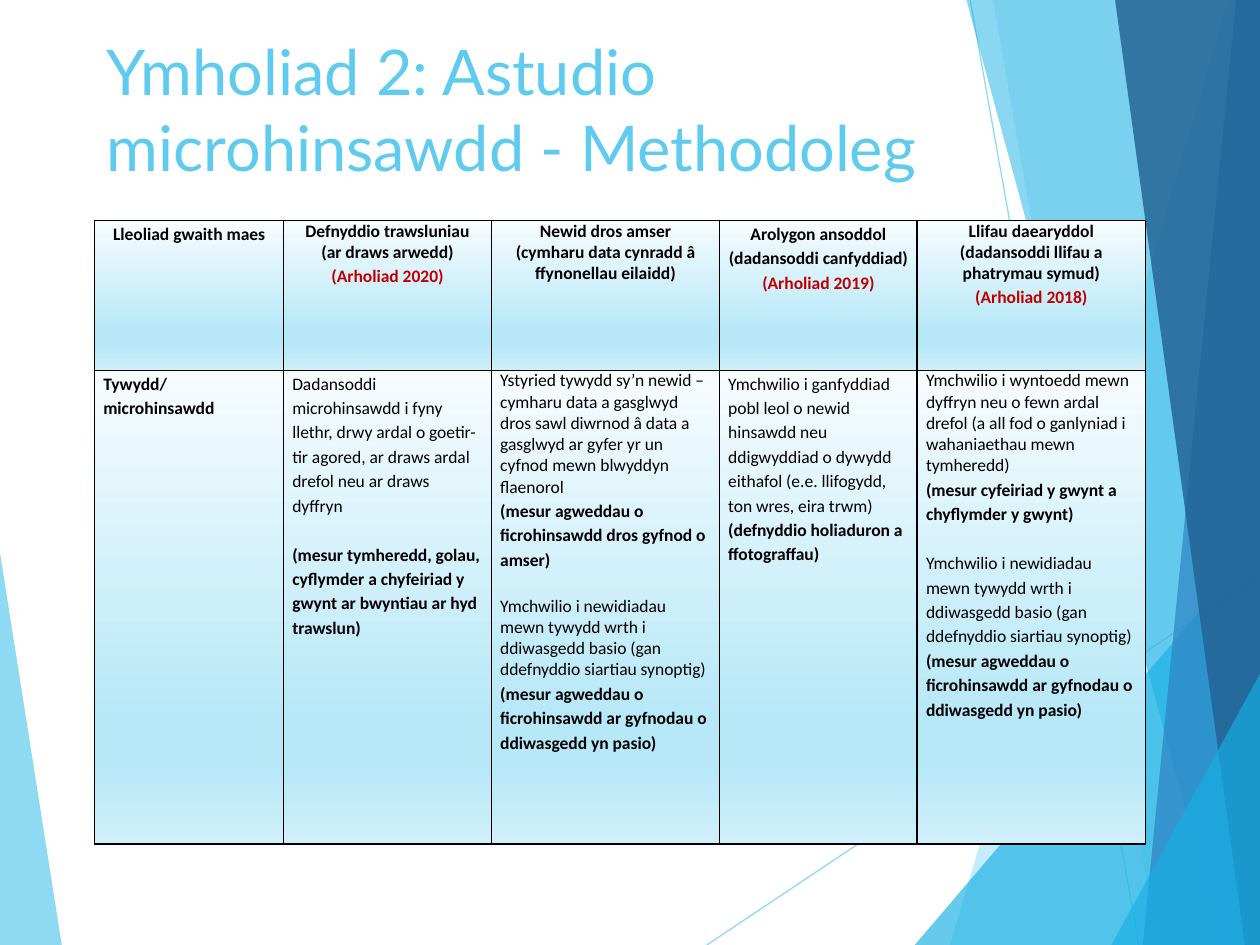
from lxml.etree import SubElement
from pptx import Presentation
from pptx.dml.color import RGBColor
from pptx.enum.shapes import MSO_CONNECTOR
from pptx.enum.text import MSO_ANCHOR, PP_ALIGN
from pptx.oxml.ns import qn
from pptx.util import Inches, Pt

SKY = RGBColor(0x5F, 0xCB, 0xEF)
CYAN = RGBColor(0x17, 0xB0, 0xE4)
BLUE = RGBColor(0x2E, 0x83, 0xC3)
NAVY = RGBColor(0x22, 0x62, 0x92)
RED = RGBColor(0xC0, 0x00, 0x00)
BLACK = RGBColor(0x00, 0x00, 0x00)
FADE = [(0, RGBColor(0xF7, 0xFC, 0xFE)), (74, RGBColor(0xB7, 0xE8, 0xF8)),
        (83, RGBColor(0xB7, 0xE8, 0xF8)), (100, RGBColor(0xCF, 0xEF, 0xFA))]

WIDE, HIGH = Inches(10), Inches(7.5)

# Background facets and lines: colour, opacity, corners in percent of the slide
SHARDS = [
    (SKY, 70, [(0, 58.5), (4.9, 100), (0, 100)]),
    (SKY, 36, [(97.5, 0), (75.4, 100), (100, 100), (100, 0)]),
    (SKY, 20, [(78.8, 0), (91.9, 100), (100, 100), (100, 0)]),
    (CYAN, 66, [(72.6, 100), (100, 57.2), (100, 100)]),
    (CYAN, 50, [(76.7, 0), (97, 100), (100, 100), (100, 0)]),
    (BLUE, 70, [(98.1, 0), (90.7, 100), (100, 100), (100, 0)]),
    (NAVY, 82, [(88.5, 0), (98.8, 100), (100, 100), (100, 0)]),
    (CYAN, 66, [(88.2, 100), (100, 71.3), (100, 100)]),
]
RAYS = [((56.1, 100), (100, 60.9)), ((77, 0), (90.4, 100))]

# Table grid, in percent of the slide
COLS = [15, 16.5, 18.1, 15.7, 18.1]
ROWS = [15.87, 50.13]

# Paragraph formats
TIGHT = {"bold": True}
LOOSE = {"bold": True, "lead": 1.15}
EXAM = {"bold": True, "lead": 1.15, "color": RED}
BODY = {"lead": 1.15}
FLAT = {}
GAP = 14

LOWS = "Ymchwilio i newidiadau mewn tywydd wrth i ddiwasgedd basio (gan ddefnyddio siartiau synoptig)"
PASS = "(mesur agweddau o ficrohinsawdd ar gyfnodau o ddiwasgedd yn pasio)"

HEAD = [
    [("Lleoliad gwaith maes", LOOSE)],
    [("Defnyddio trawsluniau", TIGHT), ("(ar draws arwedd)", TIGHT),
     ("(Arholiad 2020)", EXAM)],
    [("Newid dros amser", TIGHT),
     ("(cymharu data cynradd â ffynonellau eilaidd)", TIGHT)],
    [("Arolygon ansoddol (dadansoddi canfyddiad)", LOOSE),
     ("(Arholiad 2019)", EXAM)],
    [("Llifau daearyddol", TIGHT),
     ("(dadansoddi llifau a phatrymau symud)", TIGHT),
     ("(Arholiad 2018)", EXAM)],
]
MAIN = [
    [("Tywydd/microhinsawdd", LOOSE)],
    [("Dadansoddi microhinsawdd i fyny llethr, drwy ardal o goetir-tir agored, "
      "ar draws ardal drefol neu ar draws dyffryn", BODY),
     ("(mesur tymheredd, golau, cyflymder a chyfeiriad y gwynt ar bwyntiau "
      "ar hyd trawslun)", {**LOOSE, "above": GAP})],
    [("Ystyried tywydd sy’n newid – cymharu data a gasglwyd dros sawl diwrnod "
      "â data a gasglwyd ar gyfer yr un cyfnod mewn blwyddyn flaenorol", FLAT),
     ("(mesur agweddau o ficrohinsawdd dros gyfnod o amser)", LOOSE),
     (LOWS, {"above": GAP}), (PASS, LOOSE)],
    [("Ymchwilio i ganfyddiad pobl leol o newid hinsawdd neu ddigwyddiad o "
      "dywydd eithafol (e.e. llifogydd, ton wres, eira trwm)", BODY),
     ("(defnyddio holiaduron a ffotograffau)", LOOSE)],
    [("Ymchwilio i wyntoedd mewn dyffryn neu o fewn ardal drefol (a all fod o "
      "ganlyniad i wahaniaethau mewn tymheredd)", FLAT),
     ("(mesur cyfeiriad y gwynt a chyflymder y gwynt)", LOOSE),
     (LOWS, {**BODY, "above": GAP}), (PASS, LOOSE)],
]


def across(share):
    return round(WIDE * share / 100)


def down(share):
    return round(HIGH * share / 100)


def spot(point):
    return across(point[0]), down(point[1])


def write(para, text, font="Calibri", size=10, color=BLACK, bold=False,
          lead=1.0, above=0, align=PP_ALIGN.LEFT):
    para.alignment, para.line_spacing = align, lead
    para.space_before = Pt(above)
    run = para.add_run()
    run.text = text
    run.font.name, run.font.size, run.font.bold = font, Pt(size), bold
    run.font.color.rgb = color


def fade(fill, share):
    """Set the opacity of a solid fill's colour."""
    tone = fill.find(".//" + qn("a:srgbClr"))
    SubElement(tone, qn("a:alpha"), val=str(share * 1000))


def shard(slide, color, share, points):
    start, *rest = map(spot, points)
    form = slide.shapes.build_freeform(*start, scale=1.0)
    form.add_line_segments(rest, close=True)
    shape = form.convert_to_shape()
    shape.shadow.inherit = False
    shape.line.fill.background()
    shape.fill.solid()
    shape.fill.fore_color.rgb = color
    fade(shape.element.spPr.find(qn("a:solidFill")), share)


def ray(slide, start, end):
    line = slide.shapes.add_connector(MSO_CONNECTOR.STRAIGHT, *spot(start), *spot(end))
    line.line.color.rgb, line.line.width = SKY, Pt(0.75)
    props = line.element.spPr
    fade(props.find(qn("a:ln")), 70)
    SubElement(props, qn("a:effectLst"))


def dress(cell):
    """Give a cell black borders and the vertical gradient."""
    props = cell._tc.get_or_add_tcPr()
    for side in ("lnL", "lnR", "lnT", "lnB"):
        edge = SubElement(props, qn("a:" + side), w=str(Pt(1)))
        paint = SubElement(edge, qn("a:solidFill"))
        SubElement(paint, qn("a:srgbClr"), val=str(BLACK))
    grad = SubElement(props, qn("a:gradFill"), rotWithShape="1")
    stops = SubElement(grad, qn("a:gsLst"))
    for place, color in FADE:
        stop = SubElement(stops, qn("a:gs"), pos=str(place * 1000))
        SubElement(stop, qn("a:srgbClr"), val=str(color))
    SubElement(grad, qn("a:lin"), ang=str(90 * 60000), scaled="0")


def fill_cell(cell, paras, align):
    cell.margin_left = cell.margin_right = Inches(0.07)
    cell.margin_top = cell.margin_bottom = 0
    cell.vertical_anchor = MSO_ANCHOR.TOP
    frame = cell.text_frame
    for i, (text, style) in enumerate(paras):
        para = frame.add_paragraph() if i else frame.paragraphs[0]
        write(para, text, align=align, **style)
    dress(cell)


def grid(slide):
    frame = slide.shapes.add_table(len(ROWS), len(COLS), across(7.5), down(23.33),
                                   across(sum(COLS)), down(sum(ROWS)))
    table = frame.table
    table.first_row = table.horz_banding = False
    for col, share in zip(table.columns, COLS):
        col.width = across(share)
    for row, share in zip(table.rows, ROWS):
        row.height = down(share)
    for r, (cells, align) in enumerate([(HEAD, PP_ALIGN.CENTER), (MAIN, PP_ALIGN.LEFT)]):
        for c, paras in enumerate(cells):
            fill_cell(table.cell(r, c), paras, align)


def title(slide, text):
    box = slide.shapes.add_textbox(across(7.5), down(2.8), across(69.4), down(19.2))
    box.text_frame.word_wrap = True
    write(box.text_frame.paragraphs[0], text, font="Lato", size=36, color=SKY)


def main():
    deck = Presentation()
    deck.slide_width, deck.slide_height = WIDE, HIGH
    slide = deck.slides.add_slide(deck.slide_layouts[6])
    # Backdrop: the rays lie just above the first facet
    shard(slide, *SHARDS[0])
    for ends in RAYS:
        ray(slide, *ends)
    for facet in SHARDS[1:]:
        shard(slide, *facet)
    # Content
    grid(slide)
    title(slide, "Ymholiad 2: Astudio microhinsawdd - Methodoleg")
    deck.save("out.pptx")


if __name__ == "__main__":
    main()
